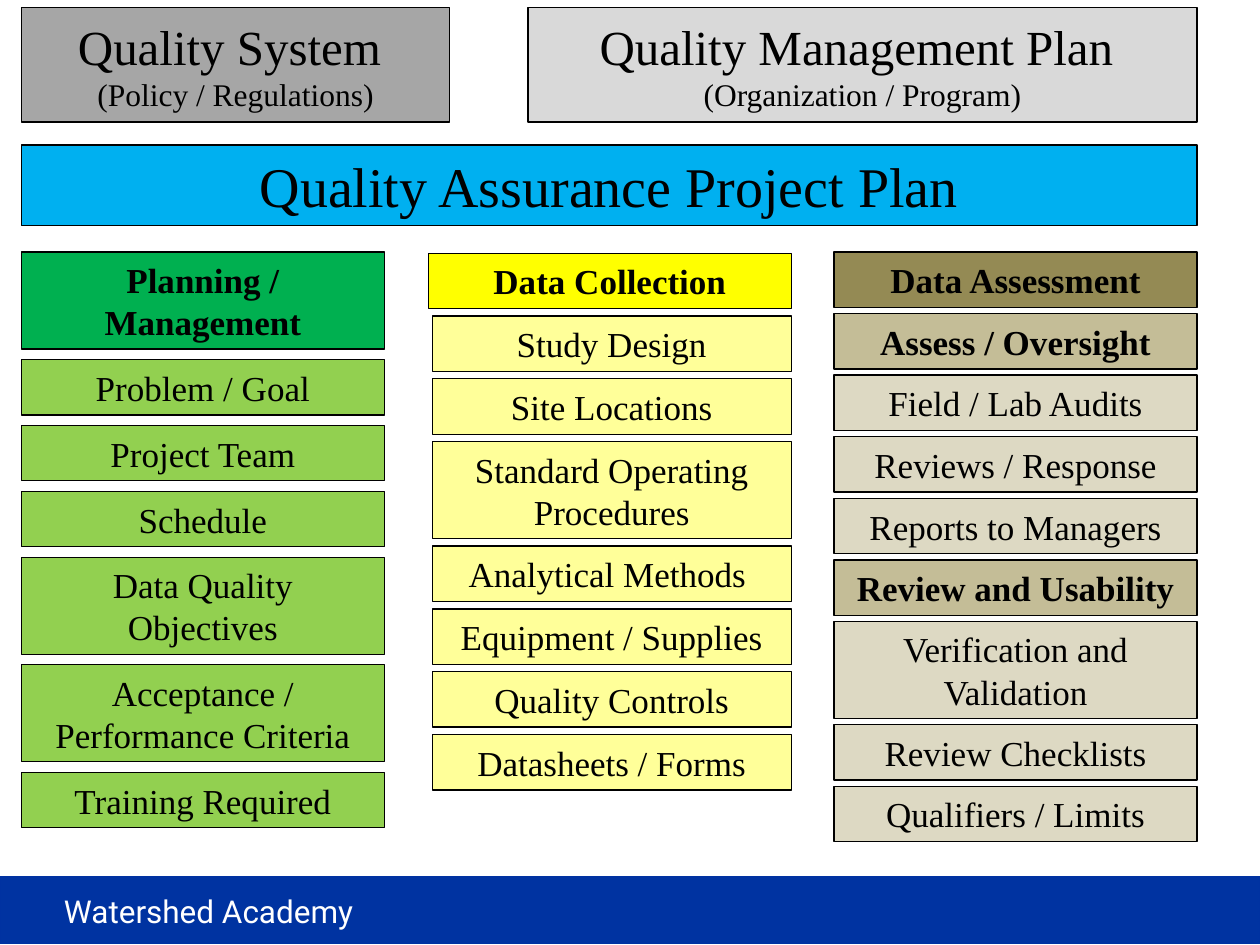
import pptx
import pptx.util
import pptx.dml.color
import pptx.enum.shapes
import pptx.enum.text

RGBColor = pptx.dml.color.RGBColor
BLACK = RGBColor(0x00, 0x00, 0x00)
WHITE = RGBColor(0xFF, 0xFF, 0xFF)
NAVY = RGBColor(0x00, 0x33, 0xA1)
NAVY_LINE = RGBColor(0x00, 0x32, 0xA1)
GRAY = RGBColor(0xA6, 0xA6, 0xA6)
LIGHT_GRAY = RGBColor(0xD9, 0xD9, 0xD9)
BLUE = RGBColor(0x00, 0xB0, 0xF0)
GREEN = RGBColor(0x00, 0xB0, 0x50)
LIGHT_GREEN = RGBColor(0x92, 0xD0, 0x50)
YELLOW = RGBColor(0xFF, 0xFF, 0x00)
LIGHT_YELLOW = RGBColor(0xFF, 0xFF, 0x99)
OLIVE = RGBColor(0x94, 0x8A, 0x54)
TAN = RGBColor(0xC4, 0xBD, 0x97)
LIGHT_TAN = RGBColor(0xDD, 0xD9, 0xC3)

SLIDE_WIDTH = pptx.util.Inches(10)
SLIDE_HEIGHT = pptx.util.Inches(7.5)
GRID_COLUMNS, GRID_ROWS = 100, 75
ONE_LINE, TWO_LINES = 4.4, 7.7
SERIF = "Times New Roman"

PLANNING = [
    ("Planning / Management", GREEN, True, TWO_LINES),
    ("Problem / Goal", LIGHT_GREEN, False, ONE_LINE),
    ("Project Team", LIGHT_GREEN, False, ONE_LINE),
    ("Schedule", LIGHT_GREEN, False, ONE_LINE),
    ("Data Quality Objectives", LIGHT_GREEN, False, TWO_LINES),
    ("Acceptance / Performance Criteria", LIGHT_GREEN, False, TWO_LINES),
    ("Training Required", LIGHT_GREEN, False, ONE_LINE),
]
COLLECTION = [
    ("Data Collection", YELLOW, True, ONE_LINE),
    ("Study Design", LIGHT_YELLOW, False, ONE_LINE),
    ("Site Locations", LIGHT_YELLOW, False, ONE_LINE),
    ("Standard Operating Procedures", LIGHT_YELLOW, False, TWO_LINES),
    ("Analytical Methods ", LIGHT_YELLOW, False, ONE_LINE),
    ("Equipment / Supplies", LIGHT_YELLOW, False, ONE_LINE),
    ("Quality Controls", LIGHT_YELLOW, False, ONE_LINE),
    ("Datasheets / Forms", LIGHT_YELLOW, False, ONE_LINE),
]
ASSESSMENT = [
    ("Data Assessment", OLIVE, True, ONE_LINE),
    ("Assess / Oversight", TAN, True, ONE_LINE),
    ("Field / Lab Audits", LIGHT_TAN, False, ONE_LINE),
    ("Reviews / Response", LIGHT_TAN, False, ONE_LINE),
    ("Reports to Managers", LIGHT_TAN, False, ONE_LINE),
    ("Review and Usability", TAN, True, ONE_LINE),
    ("Verification and Validation", LIGHT_TAN, False, TWO_LINES),
    ("Review Checklists", LIGHT_TAN, False, ONE_LINE),
    ("Qualifiers / Limits", LIGHT_TAN, False, ONE_LINE),
]


def to_lengths(box):
    left, top, width, height = box
    column, row = SLIDE_WIDTH / GRID_COLUMNS, SLIDE_HEIGHT / GRID_ROWS
    return (round(left * column), round(top * row),
            round(width * column), round(height * row))


def paint(shape, fill, line):
    shape.fill.solid()
    shape.fill.fore_color.rgb = fill
    shape.line.color.rgb = line
    shape.line.width = pptx.util.Pt(0.75)


def write_lines(shape, lines, sizes, bold=False):
    text_frame = shape.text_frame
    text_frame.text = "\n".join(lines)
    text_frame.word_wrap = True
    text_frame.auto_size = pptx.enum.text.MSO_AUTO_SIZE.NONE
    text_frame.vertical_anchor = pptx.enum.text.MSO_ANCHOR.MIDDLE
    for paragraph, size in zip(text_frame.paragraphs, sizes):
        paragraph.alignment = pptx.enum.text.PP_ALIGN.CENTER
        for run in paragraph.runs:
            run.font.name = SERIF
            run.font.size = pptx.util.Pt(size)
            run.font.bold = bold
            run.font.color.rgb = BLACK


def add_rectangle(slide, box, fill, line=BLACK):
    shape = slide.shapes.add_shape(
        pptx.enum.shapes.MSO_SHAPE.RECTANGLE, *to_lengths(box))
    shape.shadow.inherit = False
    paint(shape, fill, line)
    return shape


def add_program_box(slide, box, heading, scope, fill):
    shape = add_rectangle(slide, box, fill)
    write_lines(shape, [heading, scope], [28, 18])


def place_title(slide, box, text):
    title = slide.shapes.title
    title.left, title.top, title.width, title.height = to_lengths(box)
    paint(title, BLUE, BLACK)
    write_lines(title, [text], [32])


def add_stack(slide, box, entries, indent=0):
    left, top, width, height = box
    gap = (height - sum(entry[3] for entry in entries)) / (len(entries) - 1)
    for index, (label, fill, bold, entry_height) in enumerate(entries):
        shift = indent if index else 0
        entry_box = (left + shift, top, width - shift, entry_height)
        shape = add_rectangle(slide, entry_box, fill)
        write_lines(shape, [label], [20], bold)
        top += entry_height + gap


def add_footer(slide, box, text):
    left, top, width, height = box
    add_rectangle(slide, box, NAVY, NAVY_LINE)
    label_box = (left + 4.1, top + 0.7, width * 0.34, height - 1.2)
    label = slide.shapes.add_textbox(*to_lengths(label_box))
    label.text_frame.text = text
    label.text_frame.word_wrap = True
    font = label.text_frame.paragraphs[0].runs[0].font
    font.name = "Roboto"
    font.size = pptx.util.Pt(18)
    font.color.rgb = WHITE


def main():
    presentation = pptx.Presentation()
    presentation.slide_width = SLIDE_WIDTH
    presentation.slide_height = SLIDE_HEIGHT
    slide = presentation.slides.add_slide(presentation.slide_layouts[5])

    add_footer(slide, (0, 69.6, 100, 5.3), "Watershed Academy")
    add_program_box(slide, (1.7, 0.6, 34, 9.1), "Quality System ",
                    "(Policy / Regulations)", GRAY)
    add_program_box(slide, (41.9, 0.6, 53.1, 9.1), "Quality Management Plan ",
                    "(Organization / Program)", LIGHT_GRAY)
    place_title(slide, (1.7, 11.5, 93.3, 6.4), "Quality Assurance Project Plan")
    add_stack(slide, (1.7, 20, 28.8, 45.7), PLANNING)
    add_stack(slide, (34, 20.1, 28.8, 42.6), COLLECTION, indent=0.3)
    add_stack(slide, (66.2, 20, 28.8, 46.8), ASSESSMENT)

    presentation.save("out.pptx")


if __name__ == "__main__":
    main()
